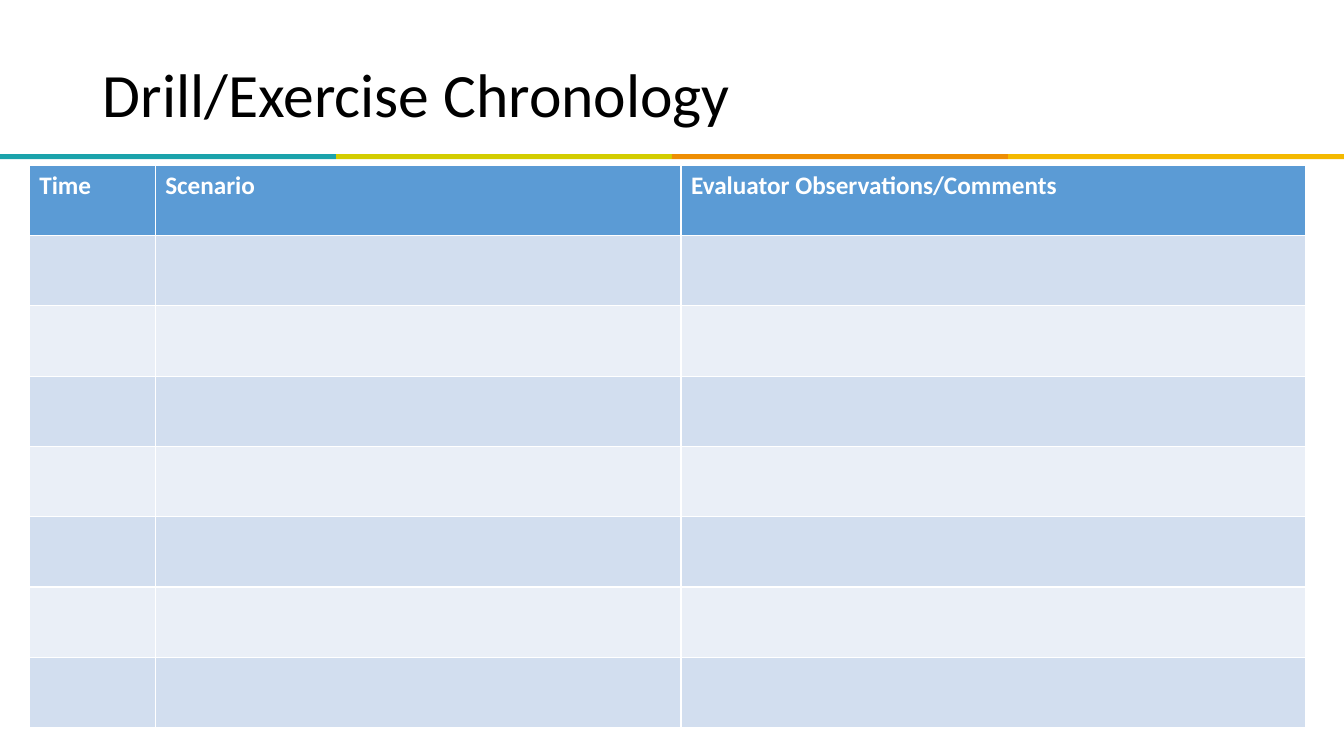
from dataclasses import dataclass

from pptx import Presentation
from pptx.dml.color import RGBColor
from pptx.enum import shapes, text
from pptx.util import Inches, Pt


@dataclass(frozen=True)
class Theme:
    font: str = "Calibri"
    title_size: int = 44
    header_size: int = 18
    ink: str = "000000"
    header_ink: str = "FFFFFF"
    header_fill: str = "5B9BD5"
    row_fills: tuple = ("D2DEEF", "EAEFF7")
    stripe_fills: tuple = ("1BA3AB", "D3CD00", "EE8E03", "F4B900")


THEME = Theme()
PAGE_WIDTH, PAGE_HEIGHT = 13.33, 7.5
HEADINGS = ("Time", "Scenario", "Evaluator Observations/Comments")
COLUMN_WIDTHS = (1.25, 5.22, 6.2)
EMPTY_ROWS = 7


def paint(filled, colour):
    filled.fill.solid()
    filled.fill.fore_color.rgb = RGBColor.from_string(colour)


def set_font(para, size, colour, bold=False):
    para.font.name = THEME.font
    para.font.size = Pt(size)
    para.font.bold = bold
    para.font.color.rgb = RGBColor.from_string(colour)


def add_stripe(page, left, top, width, height):
    """Divide the box into equal colour bands."""
    band_width = width / len(THEME.stripe_fills)
    for index, colour in enumerate(THEME.stripe_fills):
        band = page.shapes.add_shape(
            shapes.MSO_SHAPE.RECTANGLE,
            Inches(left + index * band_width), Inches(top),
            Inches(band_width), Inches(height))
        band.shadow.inherit = False
        band.line.fill.background()
        paint(band, colour)


def place_title(page, wording, left, top, width, height):
    title = page.shapes.title
    title.left, title.top = Inches(left), Inches(top)
    title.width, title.height = Inches(width), Inches(height)
    frame = title.text_frame
    frame.text = wording
    frame.word_wrap = True
    frame.auto_size = text.MSO_AUTO_SIZE.NONE
    frame.vertical_anchor = text.MSO_ANCHOR.MIDDLE
    para = frame.paragraphs[0]
    para.alignment = text.PP_ALIGN.LEFT
    para.line_spacing = 0.9
    set_font(para, THEME.title_size, THEME.ink)


def add_chronology(page, left, top, width, height):
    """Add the log table: one heading row above banded rows to fill in."""
    table = page.shapes.add_table(
        EMPTY_ROWS + 1, len(HEADINGS),
        Inches(left), Inches(top), Inches(width), Inches(height)).table
    for column, share in zip(table.columns, COLUMN_WIDTHS):
        column.width = Inches(width * share / sum(COLUMN_WIDTHS))
    for cell, heading in zip(table.rows[0].cells, HEADINGS):
        paint(cell, THEME.header_fill)
        cell.text = heading
        set_font(cell.text_frame.paragraphs[0], THEME.header_size,
                 THEME.header_ink, bold=True)
    for row in range(1, EMPTY_ROWS + 1):
        for cell in table.rows[row].cells:
            paint(cell, THEME.row_fills[(row - 1) % 2])


def main():
    deck = Presentation()
    deck.slide_width, deck.slide_height = Inches(PAGE_WIDTH), Inches(PAGE_HEIGHT)
    page = deck.slides.add_slide(deck.slide_layouts.get_by_name("Title Only"))
    add_stripe(page, 0, 1.53, PAGE_WIDTH, 0.05)
    place_title(page, "Drill/Exercise Chronology", 0.92, 0.4, 8.31, 1.13)
    add_chronology(page, 0.29, 1.64, 12.66, 5.58)
    deck.save("out.pptx")


if __name__ == "__main__":
    main()
